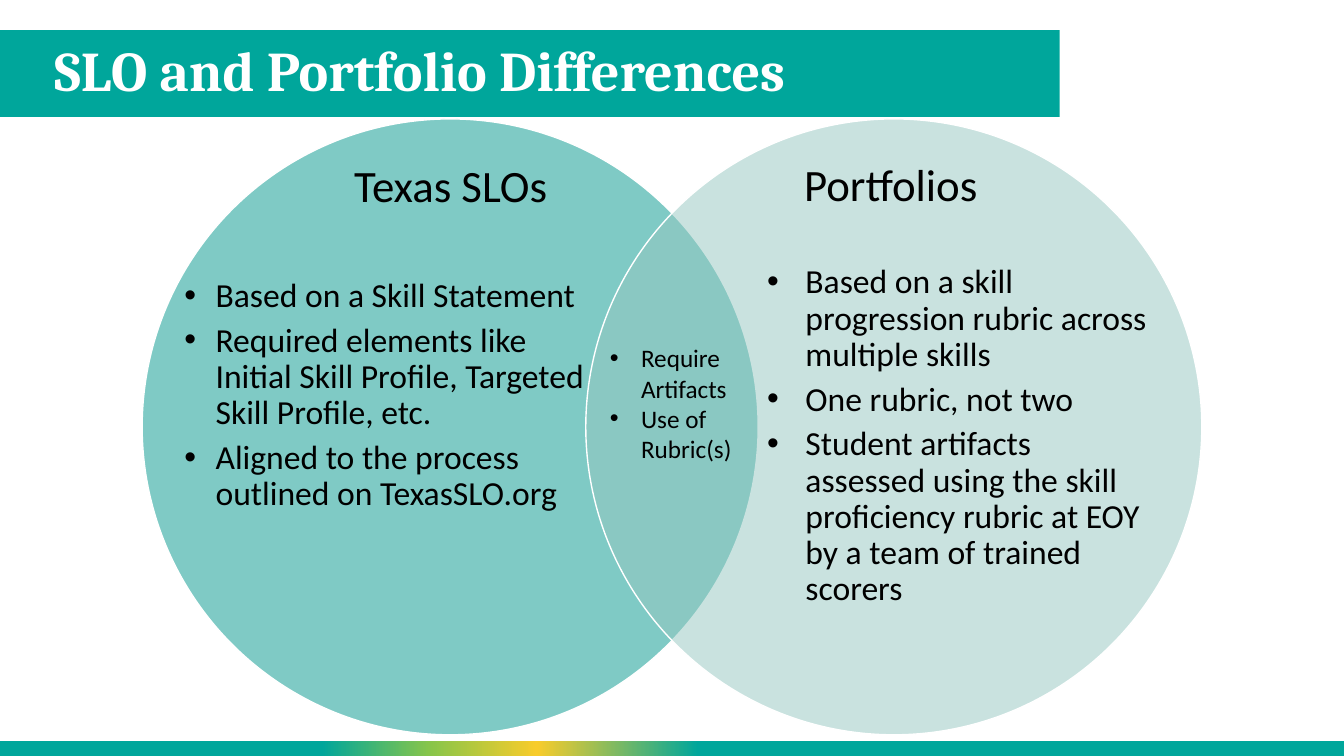
from dataclasses import dataclass

from lxml.etree import SubElement
from pptx import Presentation
from pptx.dml.color import RGBColor
from pptx.enum.shapes import MSO_SHAPE
from pptx.enum.text import MSO_ANCHOR, MSO_AUTO_SIZE, PP_ALIGN
from pptx.oxml.ns import qn
from pptx.util import Inches, Pt

TEAL = "00A69B"
WHITE = "FFFFFF"
BLACK = "000000"
STRIPE = [(0, TEAL), (48, TEAL), (60, "F8CC2B"), (68, "87C54A"), (76, TEAL), (100, TEAL)]


@dataclass
class Block:
    shape: MSO_SHAPE
    box: tuple
    color: str
    alpha: int = 100
    line: str = ""


@dataclass
class Notes:
    box: tuple
    items: list
    size: int
    margin: float
    hanging: float
    spacing: float = 0.9
    after: int = 6
    heading: str = ""
    heading_gap: int = 0


BLOCKS = [
    Block(MSO_SHAPE.RECTANGLE, (-0.01, 0.3, 10.52, 0.86), TEAL),
    Block(MSO_SHAPE.OVAL, (1.41, 1.18, 6.11, 6.11), "00978D", 50, WHITE),
    Block(MSO_SHAPE.OVAL, (5.81, 1.18, 6.11, 6.11), "95C7C1", 50, WHITE),
]

NOTES = [
    Notes((1.73, 1.58, 5.48, 3.59), [
        "Based on a Skill Statement",
        "Required elements like\nInitial Skill Profile, Targeted\nSkill Profile, etc.",
        "Aligned to the process\noutlined on TexasSLO.org",
    ], 24, 0.31, 0.31, heading="Texas SLOs", heading_gap=47),
    Notes((5.95, 3.35, 1.83, 1.31), ["Require Artifacts", "Use of Rubric(s)"],
          18, 0.31, 0.31, spacing=1.0, after=0),
    Notes((6.19, 1.57, 5.29, 4.56), [
        "Based on a skill progression rubric across multiple skills",
        "One rubric, not two",
        "Student artifacts assessed using the skill proficiency rubric at EOY "
        "by a team of trained scorers",
    ], 24, 1.7, 0.38, heading="Portfolios", heading_gap=38),
]


def rgb(color: str) -> RGBColor:
    return RGBColor.from_string(color)


def apply(target: object, values: dict) -> None:
    for name, value in values.items():
        setattr(target, name, value)


def place(box: tuple) -> list:
    return [Inches(v) for v in box]


def write(p: object, text: str, paragraph: dict, font: dict, color: str) -> None:
    p.text = text
    apply(p, paragraph)
    for r in p.runs:
        apply(r.font, font)
        r.font.color.rgb = rgb(color)


def add_block(s: object, block: Block) -> object:
    sp = s.shapes.add_shape(block.shape, *place(block.box))
    sp.shadow.inherit = False
    sp.fill.solid()
    sp.fill.fore_color.rgb = rgb(block.color)
    if block.alpha < 100:
        clr = sp.element.spPr.find(qn("a:solidFill"))[0]
        SubElement(clr, qn("a:alpha"), val=str(block.alpha * 1000))
    if block.line:
        sp.line.color.rgb = rgb(block.line)
        sp.line.width = Pt(1)
    else:
        sp.line.fill.background()
    return sp


def add_stripe(s: object) -> None:
    sp = add_block(s, Block(MSO_SHAPE.RECTANGLE, (-0.01, 7.35, 13.34, 0.15), TEAL))
    sp.fill.gradient()
    sp.fill.gradient_angle = 180
    stops = sp.element.spPr.find(qn("a:gradFill")).find(qn("a:gsLst"))
    for stop in list(stops):
        stops.remove(stop)
    for position, color in STRIPE:
        stop = SubElement(stops, qn("a:gs"), pos=str(position * 1000))
        SubElement(stop, qn("a:srgbClr"), val=color)


def add_bullet(p: object, margin: float, hanging: float) -> None:
    pPr = p._p.get_or_add_pPr()
    pPr.set("marL", str(Inches(margin)))
    pPr.set("indent", str(-Inches(hanging)))
    SubElement(pPr, qn("a:buFont"), typeface="Arial")
    SubElement(pPr, qn("a:buChar"), char="•")


def add_notes(s: object, notes: Notes) -> None:
    tf = s.shapes.add_textbox(*place(notes.box)).text_frame
    tf.word_wrap = True
    p = tf.paragraphs[0]
    if notes.heading:
        write(p, notes.heading,
              {"alignment": PP_ALIGN.CENTER, "line_spacing": notes.spacing,
               "space_after": Pt(notes.heading_gap)},
              {"name": "Calibri", "size": Pt(32)}, BLACK)
        p = tf.add_paragraph()
    for i, item in enumerate(notes.items):
        if i:
            p = tf.add_paragraph()
        add_bullet(p, notes.margin, notes.hanging)
        write(p, item,
              {"line_spacing": notes.spacing, "space_after": Pt(notes.after)},
              {"name": "Calibri", "size": Pt(notes.size)}, BLACK)


def add_title(s: object, text: str) -> None:
    sp = s.shapes.title
    sp.element.getparent().append(sp.element)
    apply(sp, dict(zip(("left", "top", "width", "height"), place((0.44, 0.3, 10.06, 0.86)))))
    tf = sp.text_frame
    apply(tf, {"word_wrap": True, "auto_size": MSO_AUTO_SIZE.NONE,
               "vertical_anchor": MSO_ANCHOR.MIDDLE})
    write(tf.paragraphs[0], text, {"alignment": PP_ALIGN.LEFT, "line_spacing": 0.9},
          {"name": "Cambria", "size": Pt(40), "bold": True}, WHITE)


def main() -> None:
    prs = Presentation()
    apply(prs, {"slide_width": Inches(13.33), "slide_height": Inches(7.5)})
    s = prs.slides.add_slide(prs.slide_layouts[5])
    for block in BLOCKS:
        add_block(s, block)
    add_stripe(s)
    add_title(s, "SLO and Portfolio Differences")
    for notes in NOTES:
        add_notes(s, notes)
    prs.save("out.pptx")


if __name__ == "__main__":
    main()
